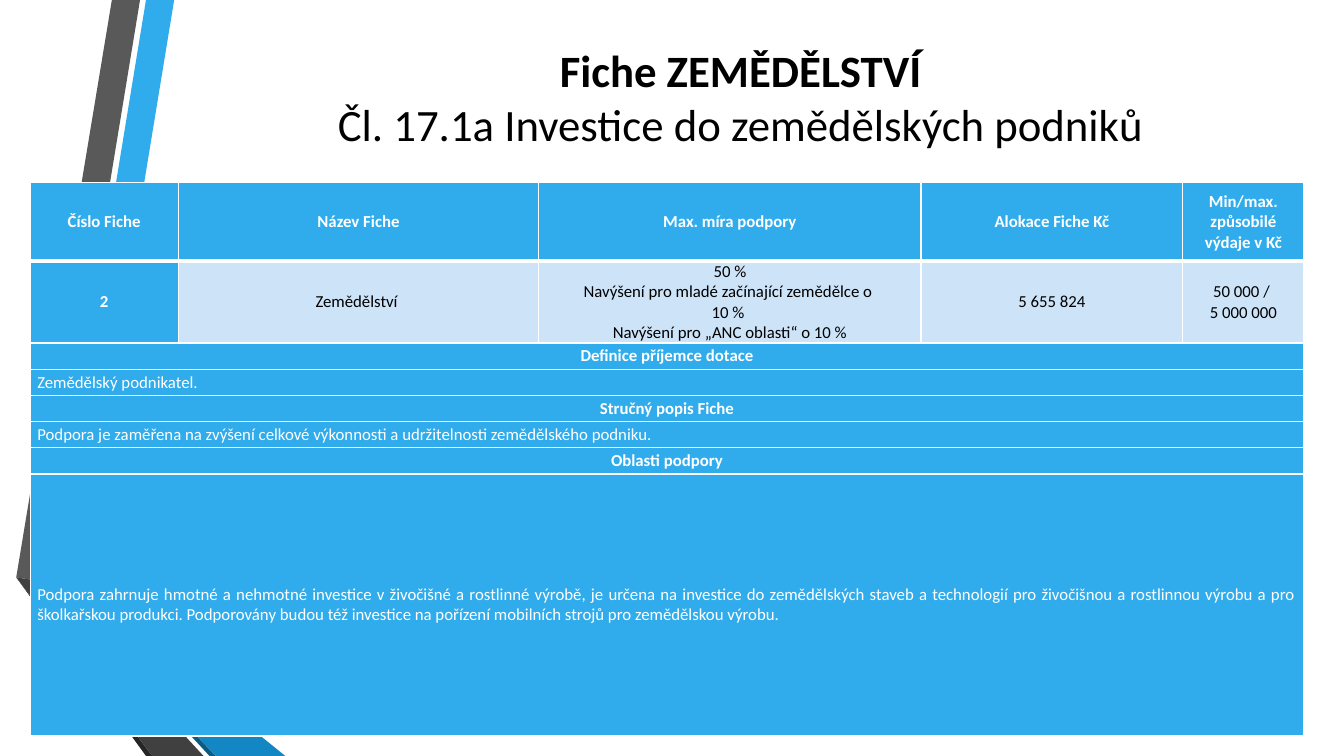
from lxml import etree
from pptx import Presentation
from pptx.dml.color import RGBColor
from pptx.enum.text import MSO_ANCHOR, MSO_AUTO_SIZE, PP_ALIGN
from pptx.oxml.ns import qn
from pptx.util import Cm, Pt

CENTER, JUSTIFY = PP_ALIGN.CENTER, PP_ALIGN.JUSTIFY
MIDDLE = MSO_ANCHOR.MIDDLE
NO_AUTOFIT = MSO_AUTO_SIZE.NONE

BLUE, PALE_BLUE, WHITE, BLACK = "30ACEC", "CDE3F8", "FFFFFF", "000000"

RIBBONS = [
    (BLUE, [(1.27, 14.68), (1.96, 14.81), (4.39, 0), (3.68, 0)]),
    ("595959", [(3.53, 0), (2.82, 0), (0.41, 14.55), (1.12, 14.66)]),
    ("262626", [(0.41, 14.55), (3.68, 19.05), (3.84, 19.05)]),
    ("0C5A82", [(1.27, 14.71), (5.28, 19.05), (5.44, 19.05)]),
    ("1287C3", [(1.27, 14.71), (5.44, 19.05), (7.19, 19.05), (1.96, 14.81), (1.27, 14.68)]),
    ("404040", [(5.13, 19.05), (1.22, 14.81), (1.12, 14.66), (0.41, 14.55), (3.84, 19.05)]),
]

COLUMN_WIDTHS = [3.73, 9.09, 9.63, 6.6, 3.05]
ROW_HEIGHTS = [1.98, 1.98] + [0.66] * 5 + [6.6]

HEADINGS = ["Číslo Fiche", "Název Fiche", "Max. míra podpory", "Alokace Fiche Kč",
            "Min/max. způsobilé výdaje v Kč"]
FICHE = ["2", "Zemědělství ",
         "50 %\nNavýšení pro mladé začínající zemědělce o \n10 % \nNavýšení pro „ANC oblasti“ o 10 %",
         "5 655 824", "50 000 / \n5 000 000"]
SECTIONS = [
    ("Definice příjemce dotace", "Zemědělský podnikatel."),
    ("Stručný popis Fiche",
     "Podpora je zaměřena na zvýšení celkové výkonnosti a udržitelnosti zemědělského podniku."),
    ("Oblasti podpory",
     "Podpora zahrnuje hmotné a nehmotné investice v živočišné a rostlinné výrobě, je určena na "
     "investice do zemědělských staveb a technologií pro živočišnou a rostlinnou výrobu a pro "
     "školkařskou produkci. Podporovány budou též investice na pořízení mobilních strojů pro "
     "zemědělskou výrobu."),
]


def color(hex_value):
    return RGBColor.from_string(hex_value)


class FicheSlide:
    """Holds the current slide and its text style, and draws its elements."""

    def __init__(self, slide, font="Calibri", title_size=32, table_size=12):
        self.slide = slide
        self.font = font
        self.title_size = title_size
        self.table_size = table_size

    def style(self, font, size, hex_value, bold=None):
        font.name, font.size, font.bold = self.font, Pt(size), bold
        font.color.rgb = color(hex_value)

    def ribbon(self, hex_value, corners):
        points = [(Cm(x), Cm(y)) for x, y in corners]
        builder = self.slide.shapes.build_freeform(*points[0])
        builder.add_line_segments(points[1:], close=True)
        ribbon = builder.convert_to_shape()
        ribbon.shadow.inherit = False
        ribbon.fill.solid()
        ribbon.fill.fore_color.rgb = color(hex_value)
        ribbon.line.fill.background()

    def title(self, heading, subheading):
        title = self.slide.shapes.title
        title.left, title.top, title.width, title.height = Cm(4.75), 0, Cm(27.84), Cm(4.88)
        frame = title.text_frame
        frame.auto_size, frame.vertical_anchor = NO_AUTOFIT, MIDDLE
        line = frame.paragraphs[0]
        line.alignment = CENTER
        self.style(line.font, self.title_size, BLACK)
        heading_run = line.add_run()
        heading_run.text, heading_run.font.bold = heading, True
        line.add_line_break()
        line.add_run().text = subheading

    def table(self, left, top, widths, heights):
        table = self.slide.shapes.add_table(
            len(heights), len(widths), Cm(left), Cm(top), Cm(sum(widths)), Cm(sum(heights))).table
        table.horz_banding = False
        for column, width in zip(table.columns, widths):
            column.width = Cm(width)
        for row, height in zip(table.rows, heights):
            row.height = Cm(height)
        return table

    def borders(self, cell, top=1, bottom=1):
        properties = cell._tc.get_or_add_tcPr()
        for side, width in (("L", 1), ("R", 1), ("T", top), ("B", bottom)):
            line = etree.SubElement(properties, qn(f"a:ln{side}"), w=str(Pt(width)))
            fill = etree.SubElement(line, qn("a:solidFill"))
            etree.SubElement(fill, qn("a:srgbClr"), val=WHITE)

    def cell(self, cell, text, fill=BLUE, ink=WHITE, bold=False, align=CENTER, top=1, bottom=1):
        self.borders(cell, top, bottom)
        cell.fill.solid()
        cell.fill.fore_color.rgb = color(fill)
        cell.vertical_anchor = MIDDLE
        cell.margin_left = cell.margin_right = Cm(0.18)
        cell.margin_top = cell.margin_bottom = 0
        cell.text = text
        for paragraph in cell.text_frame.paragraphs:
            paragraph.alignment = align
            self.style(paragraph.font, self.table_size, ink, bold)

    def band(self, table, row, text, **look):
        cells = list(table.rows[row].cells)
        cells[0].merge(cells[-1])
        self.cell(cells[0], text, **look)
        for spanned in cells[1:]:
            self.borders(spanned)


def main():
    presentation = Presentation()
    presentation.slide_width, presentation.slide_height = Cm(33.87), Cm(19.05)
    page = FicheSlide(presentation.slides.add_slide(presentation.slide_layouts[5]))

    for hex_value, corners in RIBBONS:
        page.ribbon(hex_value, corners)
    page.title("Fiche ZEMĚDĚLSTVÍ", "Čl. 17.1a Investice do zemědělských podniků")

    table = page.table(0.76, 4.6, COLUMN_WIDTHS, ROW_HEIGHTS)
    for column, (heading, value) in enumerate(zip(HEADINGS, FICHE)):
        page.cell(table.cell(0, column), heading, bold=True, bottom=3)
        look = {"fill": PALE_BLUE, "ink": BLACK} if column else {"bold": True}
        page.cell(table.cell(1, column), value, top=3, **look)
    for index, (heading, description) in enumerate(SECTIONS):
        row = 2 + 2 * index
        page.band(table, row, heading, bold=True)
        page.band(table, row + 1, description, align=JUSTIFY)

    presentation.save("out.pptx")


if __name__ == "__main__":
    main()
